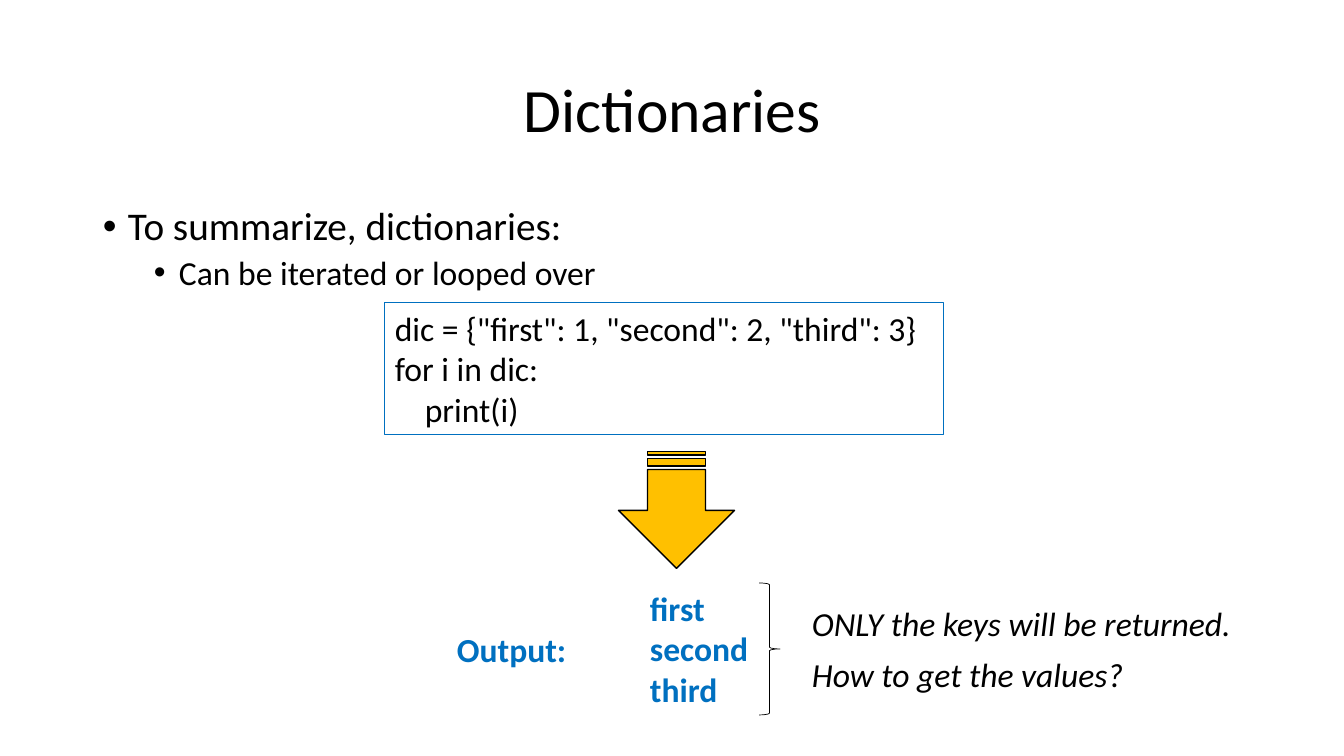
"""Build the slide on looping over a dictionary."""
from lxml import etree
from pptx import Presentation
from pptx import util as u
from pptx.dml import color
from pptx.enum import shapes, text
from pptx.oxml import ns

THEME = {
    "font": "Calibri",
    "ink": "000000", "accent": "0070C0", "arrow": "FFC000",
    "title": 44, "lead": 28, "body": 24,
    "frame": 0.75, "outline": 1, "brace": 0.5,
}
SLIDE = (1344, 756)

TITLE = "Dictionaries"
SUMMARY = [
    ("To summarize, dictionaries:", {"size": "lead", "indent": 25, "before": 10}),
    ("Can be iterated or looped over", {"size": "body", "indent": 76, "before": 5}),
]
CODE = [
    ('dic = {"first": 1, "second": 2, "third": 3}', 0),
    ("for i in dic:", 0),
    ("print(i)", 30),
]
LABEL = "Output:"
KEYS = ["first", "second", "third"]
REMARKS = ["ONLY the keys will be returned.", "How to get the values?"]

TITLE_BOX = (93, 40, 1159, 146)
SUMMARY_BOX = (93, 202, 1159, 480)
CODE_BOX = (385, 303, 559, 132)
ARROW_BOX = (618, 452, 117, 116)
LABEL_BOX = (447, 624, 131, 50)
KEYS_BOX = (640, 583, 120, 132)
BRACE_BOX = (759, 583, 21, 132)
REMARK_BOX = (802, 598, 449, 50)
REMARK_STEP = 51
HANG = 25


def px(length):
    return u.Emu(round(length * 914400 / 100.8))


def rgb(name):
    return color.RGBColor.from_string(THEME[name])


def write(frame, words, *, first=False, size="body", ink="ink", bold=False,
          italic=False, align=text.PP_ALIGN.LEFT, spacing=1.0, before=0,
          indent=0, bullet=False):
    line = frame.paragraphs[0] if first else frame.add_paragraph()
    line.alignment = align
    line.line_spacing = spacing
    line.space_before = u.Pt(before)
    run = line.add_run()
    run.text = words
    run.font.name = THEME["font"]
    run.font.size = u.Pt(THEME[size])
    run.font.color.rgb = rgb(ink)
    run.font.bold = bold
    run.font.italic = italic
    props = line._p.get_or_add_pPr()
    props.set("marL", str(px(indent)))
    if bullet:
        props.set("indent", str(-px(HANG)))
        etree.SubElement(props, ns.qn("a:buFont")).set("typeface", "Arial")
        etree.SubElement(props, ns.qn("a:buChar")).set("char", "•")


def text_frame(slide, box, wrap=True, anchor=text.MSO_ANCHOR.TOP):
    frame = slide.shapes.add_textbox(*map(px, box)).text_frame
    frame.word_wrap = wrap
    frame.vertical_anchor = anchor
    return frame


def outlined(slide, kind, box, ink, width, fill=None):
    shape = slide.shapes.add_shape(kind, *map(px, box))
    shape.shadow.inherit = False
    shape.line.color.rgb = rgb(ink)
    shape.line.width = u.Pt(THEME[width])
    if fill:
        shape.fill.solid()
        shape.fill.fore_color.rgb = rgb(fill)
    else:
        shape.fill.background()
    return shape


def main():
    deck = Presentation()
    deck.slide_width, deck.slide_height = map(px, SLIDE)
    slide = deck.slides.add_slide(deck.slide_layouts[6])
    kinds = shapes.MSO_SHAPE

    title = text_frame(slide, TITLE_BOX, anchor=text.MSO_ANCHOR.MIDDLE)
    write(title, TITLE, first=True, size="title", spacing=0.9,
          align=text.PP_ALIGN.CENTER)

    summary = text_frame(slide, SUMMARY_BOX)
    for i, (words, style) in enumerate(SUMMARY):
        write(summary, words, first=i == 0, spacing=0.9, bullet=True, **style)

    label = text_frame(slide, LABEL_BOX, wrap=False)
    write(label, LABEL, first=True, ink="accent", bold=True)

    code = outlined(slide, kinds.RECTANGLE, CODE_BOX, "accent", "frame").text_frame
    code.word_wrap = True
    code.vertical_anchor = text.MSO_ANCHOR.TOP
    for i, (words, indent) in enumerate(CODE):
        write(code, words, first=i == 0, indent=indent)

    arrow = outlined(slide, kinds.STRIPED_RIGHT_ARROW, ARROW_BOX, "ink", "outline",
                     fill="arrow")
    arrow.rotation = 90

    keys = text_frame(slide, KEYS_BOX, wrap=False)
    for i, key in enumerate(KEYS):
        write(keys, key, first=i == 0, ink="accent", bold=True)

    left, top, width, height = REMARK_BOX
    for i, words in enumerate(REMARKS):
        remark = text_frame(slide, (left, top + i * REMARK_STEP, width, height),
                            wrap=False)
        write(remark, words, first=True, italic=True)

    outlined(slide, kinds.RIGHT_BRACE, BRACE_BOX, "ink", "brace")
    deck.save("out.pptx")


if __name__ == "__main__":
    main()
